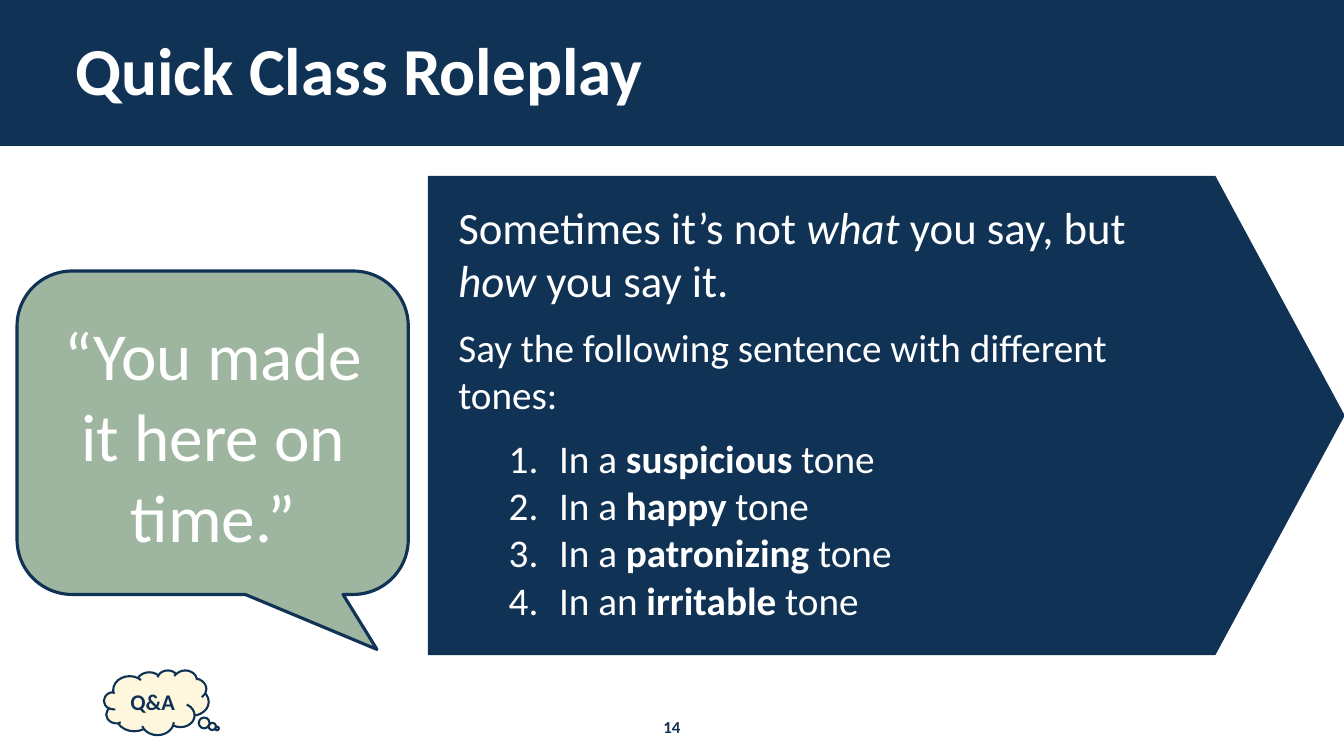
from dataclasses import dataclass

from lxml.etree import SubElement
from pptx import Presentation
from pptx.dml.color import RGBColor
from pptx.enum.shapes import MSO_SHAPE
from pptx.enum.text import MSO_ANCHOR, PP_ALIGN
from pptx.oxml.ns import qn
from pptx.util import Cm, Pt


@dataclass(frozen=True)
class Theme:
    font: str = "Calibri"
    navy: RGBColor = RGBColor(0x10, 0x32, 0x55)
    ink: RGBColor = RGBColor(0x0E, 0x32, 0x55)
    sage: RGBColor = RGBColor(0x9E, 0xB6, 0x9F)
    cream: RGBColor = RGBColor(0xFF, 0xF7, 0xDD)
    white: RGBColor = RGBColor(0xFF, 0xFF, 0xFF)
    display: int = 48
    lead: int = 32
    body: int = 28
    badge: int = 16
    footer: int = 12


class SlideBuilder:
    def __init__(self, slide, theme):
        self.slide = slide
        self.theme = theme

    def shape(self, kind, box, fill, line=None, width=1, adjustments=()):
        shape = self.slide.shapes.add_shape(kind, *map(Cm, box))
        shape.shadow.inherit = False
        shape.fill.solid()
        shape.fill.fore_color.rgb = fill
        if line is None:
            shape.line.fill.background()
        else:
            shape.line.color.rgb = line
            shape.line.width = Pt(width)
        for index, value in enumerate(adjustments):
            shape.adjustments[index] = value
        return shape

    def text_box(self, box, anchor=MSO_ANCHOR.TOP):
        frame = self.slide.shapes.add_textbox(*map(Cm, box)).text_frame
        frame.word_wrap = True
        frame.vertical_anchor = anchor
        return frame

    def paragraph(self, frame, runs, size, color, align=PP_ALIGN.LEFT, after=0, spacing=1.0, numbered=False):
        paragraph = frame.paragraphs[0]
        if paragraph.runs:
            paragraph = frame.add_paragraph()
        paragraph.alignment = align
        paragraph.space_after = Pt(after)
        paragraph.line_spacing = spacing
        if numbered:
            properties = paragraph._p.get_or_add_pPr()
            properties.set("marL", str(Cm(2.54)))
            properties.set("indent", str(-Cm(1.27)))
            SubElement(properties, qn("a:buFont"), typeface=self.theme.font)
            SubElement(properties, qn("a:buAutoNum"), type="arabicPeriod")
        for text, style in runs:
            run = paragraph.add_run()
            run.text = text
            run.font.name = self.theme.font
            run.font.size = Pt(size)
            run.font.color.rgb = color
            run.font.bold = style == "bold"
            run.font.italic = style == "italic"


def main():
    theme = Theme()
    presentation = Presentation()
    presentation.slide_width = Cm(33.87)
    presentation.slide_height = Cm(19.05)
    slide = presentation.slides.add_slide(presentation.slide_layouts[6])
    builder = SlideBuilder(slide, theme)

    builder.shape(MSO_SHAPE.RECTANGLE, (0, 0, 33.87, 3.68), theme.navy)
    title = builder.text_box((1.65, 1.02, 30.58, 1.7), MSO_ANCHOR.MIDDLE)
    builder.paragraph(title, [("Quick Class Roleplay", "bold")], theme.display, theme.white, spacing=0.9)

    page_number = builder.text_box((15.47, 17.93, 2.92, 0.76))
    builder.paragraph(page_number, [("14", "bold")], theme.footer, theme.navy, PP_ALIGN.CENTER)

    builder.shape(MSO_SHAPE.ROUNDED_RECTANGULAR_CALLOUT, (0.43, 6.83, 9.86, 8.15),
                  theme.sage, theme.navy, 2.25, (0.42, 0.67, 0.17))
    builder.shape(MSO_SHAPE.PENTAGON, (10.8, 4.45, 23.07, 12.04),
                  theme.navy, theme.navy, 1, (0.27,))

    quote = builder.text_box((0.79, 7.14, 9.17, 7.62), MSO_ANCHOR.MIDDLE)
    builder.paragraph(quote, [("“You made it here on time.”", None)],
                      theme.display, theme.white, PP_ALIGN.CENTER)

    instructions = builder.text_box((11.3, 4.9, 19.2, 11.18))
    lead = [
        ("Sometimes it’s not ", None),
        ("what ", "italic"),
        ("you say, but ", None),
        ("how ", "italic"),
        ("you say it.", None),
    ]
    builder.paragraph(instructions, lead, theme.lead, theme.white, after=12)
    builder.paragraph(instructions, [("Say the following sentence with different tones:", None)],
                      theme.body, theme.white, after=12)
    tones = [("In a ", "suspicious"), ("In a ", "happy"), ("In a ", "patronizing"), ("In an ", "irritable")]
    for opening, tone in tones:
        builder.paragraph(instructions, [(opening, None), (tone, "bold"), (" tone", None)],
                          theme.body, theme.white, numbered=True)

    cloud = builder.shape(MSO_SHAPE.CLOUD_CALLOUT, (2.62, 16.89, 2.64, 1.63),
                          theme.cream, theme.ink, 1.5, (0.58, 0.4))
    badge = cloud.text_frame
    badge.margin_left = badge.margin_right = badge.margin_top = badge.margin_bottom = 0
    badge.word_wrap = False
    badge.vertical_anchor = MSO_ANCHOR.MIDDLE
    builder.paragraph(badge, [("Q&A", "bold")], theme.badge, theme.ink, PP_ALIGN.CENTER, 8, 1.07)

    presentation.save("out.pptx")


if __name__ == "__main__":
    main()
